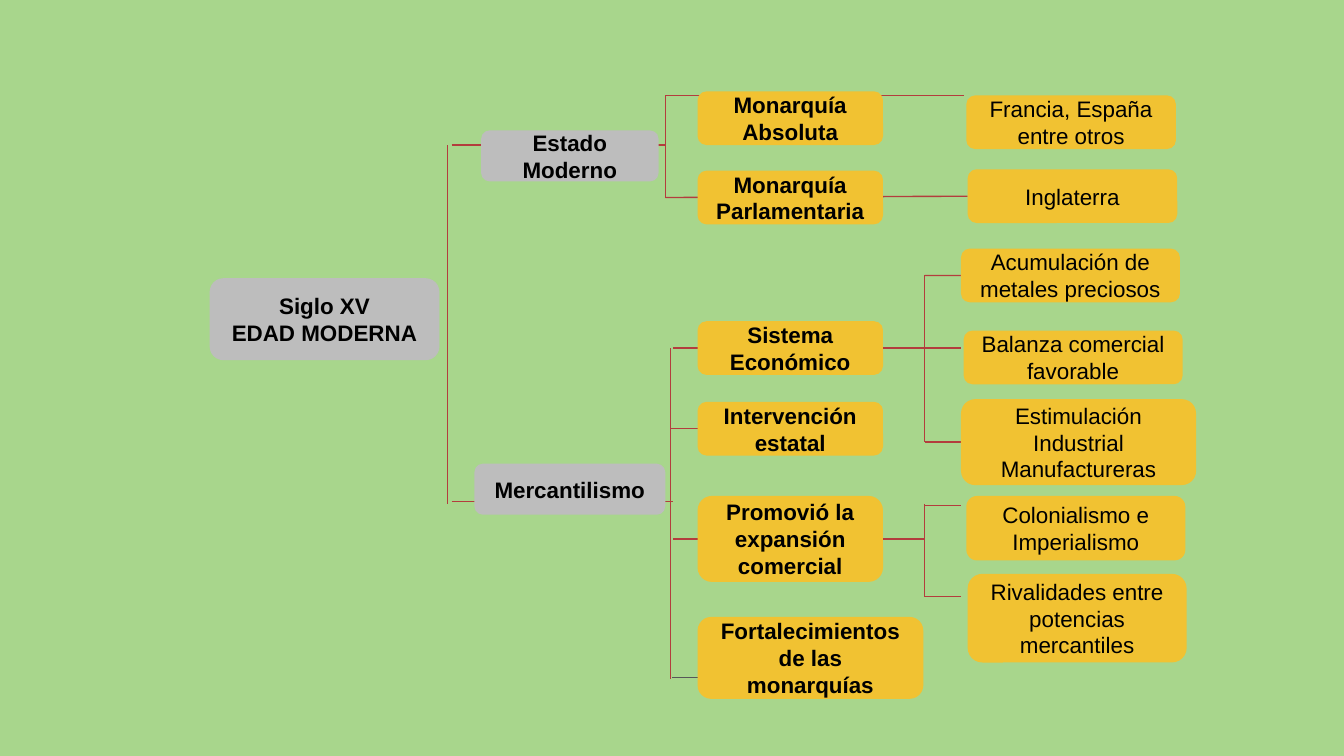
from lxml import etree
from pptx import Presentation
from pptx.dml.color import RGBColor
from pptx.enum import shapes, text
from pptx.oxml.ns import qn
from pptx.util import Inches, Pt

COLORS = {"background": "A8D68C", "topic": "BDBDBD", "detail": "F1C232",
          "branch": "B33D3D", "last_branch": "575757", "text": "000000"}
FONT, SIZE = "Arial", 12
LEFT, RIGHT = 1, 3  # connection sites

# Each level: fill, bold, boxes as (lines, left, top, width, height)
LEVELS = [
    ("topic", True, [
        (["Siglo XV", "EDAD MODERNA"], 1.56, 2.07, 1.71, 0.61),
        (["Estado Moderno"], 3.58, 0.97, 1.32, 0.38),
        (["Mercantilismo"], 3.53, 3.45, 1.42, 0.38),
    ]),
    ("detail", True, [
        (["Monarquía Absoluta"], 5.19, 0.68, 1.38, 0.4),
        (["Monarquía Parlamentaria"], 5.19, 1.27, 1.38, 0.4),
        (["Sistema Económico"], 5.19, 2.39, 1.38, 0.4),
        (["Intervención estatal"], 5.19, 2.99, 1.38, 0.4),
        (["Promovió la expansión comercial"], 5.19, 3.69, 1.38, 0.64),
        (["Fortalecimientos de las monarquías"], 5.19, 4.59, 1.68, 0.61),
    ]),
    ("detail", False, [
        (["Francia, España entre otros"], 7.19, 0.71, 1.56, 0.4),
        (["Inglaterra"], 7.2, 1.26, 1.56, 0.4),
        (["Acumulación de metales preciosos"], 7.15, 1.85, 1.63, 0.4),
        (["Balanza comercial favorable"], 7.17, 2.46, 1.63, 0.4),
        (["Estimulación Industrial Manufactureras"], 7.15, 2.97, 1.75, 0.64),
        (["Colonialismo e Imperialismo"], 7.19, 3.69, 1.63, 0.48),
        (["Rivalidades entre potencias mercantiles"], 7.2, 4.27, 1.63, 0.66),
    ]),
]

# Vertical trunks: x, top, bottom
TRUNKS = [(3.33, 1.08, 3.75), (4.95, 0.71, 1.47), (4.99, 2.59, 5.05),
          (6.88, 2.05, 3.29), (6.88, 3.75, 4.44)]

# Horizontal twigs: start x, end x, y, box joined at start, box joined at end
TWIGS = [
    (3.36, 4.95, 1.08, None, None),
    (4.95, 7.17, 0.71, None, None),
    (4.95, 7.2, 1.47, None, "Inglaterra"),
    (3.36, 5.01, 3.73, None, None),
    (5.01, 6.88, 2.59, None, None),
    (6.88, 7.15, 2.05, None, "Acumulación de metales preciosos"),
    (6.88, 7.15, 2.59, None, None),
    (6.88, 7.15, 3.29, None, "Estimulación Industrial Manufactureras"),
    (4.99, 5.19, 3.19, None, "Intervención estatal"),
    (5.01, 5.19, 4.01, None, "Promovió la expansión comercial"),
    (6.57, 6.88, 4.01, "Promovió la expansión comercial", None),
    (6.88, 7.15, 3.76, None, None),
    (6.88, 7.15, 4.44, None, None),
]
LAST_TWIG = (5, 5.19, 5.04, None, None)


def rgb(name):
    return RGBColor.from_string(COLORS[name])


def add_box(slide, lines, left, top, width, height, fill, bold):
    box = slide.shapes.add_shape(
        shapes.MSO_SHAPE.ROUNDED_RECTANGLE,
        Inches(left), Inches(top), Inches(width), Inches(height))
    box.shadow.inherit = False
    box.fill.solid()
    box.fill.fore_color.rgb = rgb(fill)
    box.line.fill.background()
    frame = box.text_frame
    frame.word_wrap = True
    frame.vertical_anchor = text.MSO_ANCHOR.MIDDLE
    for i, line in enumerate(lines):
        paragraph = frame.add_paragraph() if i else frame.paragraphs[0]
        paragraph.alignment = text.PP_ALIGN.CENTER
        run = paragraph.add_run()
        run.text = line
        run.font.name, run.font.size, run.font.bold = FONT, Pt(SIZE), bold
        run.font.color.rgb = rgb("text")
    return box


def add_branch(slide, x1, y1, x2, y2, color="branch"):
    """Draw a line behind every box."""
    branch = slide.shapes.add_connector(
        shapes.MSO_CONNECTOR.STRAIGHT,
        Inches(x1), Inches(y1), Inches(x2), Inches(y2))
    branch.line.color.rgb = rgb(color)
    branch.line.width = Pt(0.75)
    etree.SubElement(branch._element.spPr, qn("a:effectLst"))
    slide.shapes._spTree.insert(2, branch._element)
    return branch


def add_twig(slide, boxes, start, end, y, source, target, color="branch"):
    twig = add_branch(slide, start, y, end, y, color)
    if source:
        twig.begin_connect(boxes[source], RIGHT)
    if target:
        twig.end_connect(boxes[target], LEFT)


def main():
    deck = Presentation()
    deck.slide_width = Inches(10)
    deck.slide_height = deck.slide_width * 9 // 16
    slide = deck.slides.add_slide(deck.slide_layouts[6])
    slide.background.fill.solid()
    slide.background.fill.fore_color.rgb = rgb("background")

    boxes = {}
    for fill, bold, entries in LEVELS:
        for lines, *place in entries:
            boxes[" ".join(lines)] = add_box(slide, lines, *place, fill, bold)

    add_twig(slide, boxes, *LAST_TWIG, color="last_branch")
    for twig in TWIGS:
        add_twig(slide, boxes, *twig)
    for x, top, bottom in TRUNKS:
        add_branch(slide, x, top, x, bottom)

    deck.save("out.pptx")


if __name__ == "__main__":
    main()
